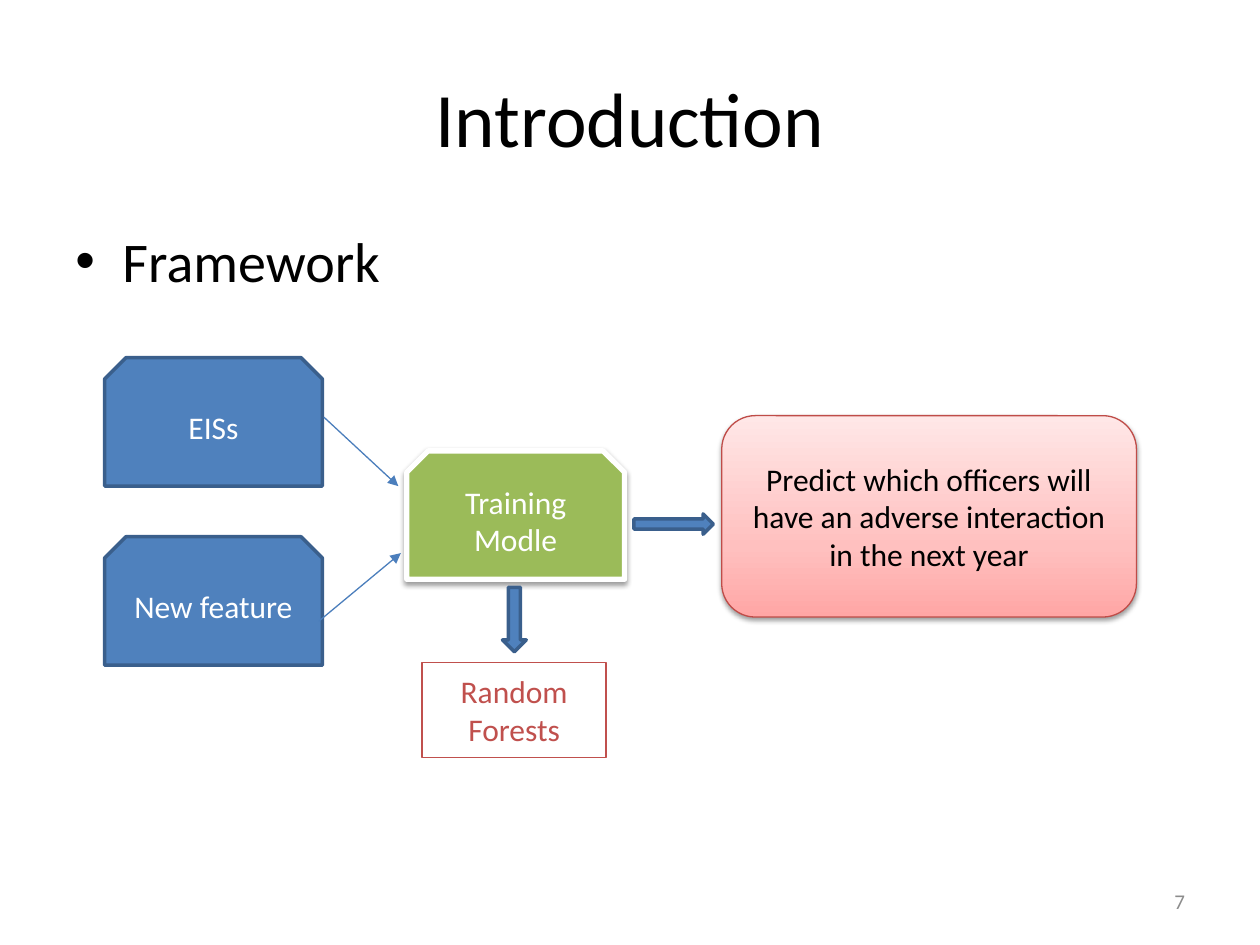
from lxml.etree import SubElement
from pptx import Presentation
from pptx.dml.color import RGBColor
from pptx.enum.shapes import MSO_CONNECTOR, MSO_SHAPE as SHAPE
from pptx.enum.text import MSO_ANCHOR as ANCHOR, PP_ALIGN as ALIGN
from pptx.oxml import parse_xml
from pptx.oxml.ns import nsdecls, qn
from pptx.util import Cm, Pt

FONT = "Calibri"
BLACK = RGBColor(0x00, 0x00, 0x00)
WHITE = RGBColor(0xFF, 0xFF, 0xFF)
GRAY = RGBColor(0x8C, 0x8C, 0x8C)
BLUE = RGBColor(0x4F, 0x81, 0xBD)
NAVY = RGBColor(0x3A, 0x5F, 0x8C)
LINK = RGBColor(0x4B, 0x7E, 0xBC)
GREEN = RGBColor(0x9B, 0xBB, 0x59)
RED = RGBColor(0xC0, 0x50, 0x4D)
DARK_RED = RGBColor(0xBF, 0x4C, 0x48)
PINKS = [(0, RGBColor(0xFF, 0xA6, 0xA5)), (35, RGBColor(0xFF, 0xC0, 0xBF)),
         (100, RGBColor(0xFF, 0xE7, 0xE7))]

TITLE = ("Introduction", (1.27, 0.76, 22.86, 3.18))
BULLET = ("Framework", (1.27, 4.45, 22.86, 12.57))
NUMBER = ("7", (18.21, 17.65, 5.93, 1.02))
CARD = (4.39, 2.59)
INPUTS = dict(kind=SHAPE.SNIP_2_SAME_RECTANGLE, fill=BLUE, line=NAVY, width=2)
ARROW = dict(fill=BLUE, line=NAVY, width=2)
NODES = [
    ("EISs", (2.11, 7.21, *CARD), INPUTS),
    ("New feature", (2.11, 10.82, *CARD), INPUTS),
    ("Training Modle", (8.2, 9.09, *CARD),
     dict(kind=SHAPE.SNIP_2_SAME_RECTANGLE, fill=GREEN, line=WHITE, width=3, shadow=True)),
    ("", (12.78, 10.36, 1.6, 0.41), dict(ARROW, kind=SHAPE.RIGHT_ARROW)),
    ("Predict which officers will have an adverse interaction in the next year",
     (14.55, 8.38, 8.36, 4.06),
     dict(kind=SHAPE.ROUNDED_RECTANGLE, fill=PINKS, line=DARK_RED, color=BLACK, shadow=True)),
    ("", (10.13, 11.84, 0.48, 1.3), dict(ARROW, kind=SHAPE.DOWN_ARROW)),
    ("Random Forests", (8.51, 13.36, 3.71, 1.91),
     dict(kind=SHAPE.RECTANGLE, line=RED, color=RED)),
]
LINKS = [(6.43, 12.52, 8.08, 11.15), (6.53, 8.41, 8.03, 9.8)]


def write(sp, text, size=18, color=WHITE, align=ALIGN.CENTER, anchor=ANCHOR.MIDDLE, bullet=False):
    tf = sp.text_frame
    tf.word_wrap = True
    tf.vertical_anchor = anchor
    p = tf.paragraphs[0]
    p.alignment = align
    if bullet:
        pPr = p._p.get_or_add_pPr()
        pPr.set("marL", str(Cm(0.95)))
        pPr.set("indent", str(-Cm(0.95)))
        SubElement(pPr, qn("a:buFont")).set("typeface", "Arial")
        SubElement(pPr, qn("a:buChar")).set("char", "•")
    r = p.add_run()
    r.text = text
    r.font.name, r.font.size, r.font.color.rgb = FONT, Pt(size), color


def gradient(sp, stops):
    gs = "".join(f'<a:gs pos="{pos * 1000}"><a:srgbClr val="{color}"/></a:gs>'
                 for pos, color in stops)
    geom = sp._element.spPr.find(qn("a:prstGeom"))
    geom.addnext(parse_xml(f'<a:gradFill {nsdecls("a")} rotWithShape="1"><a:gsLst>{gs}</a:gsLst>'
                           '<a:lin ang="16200000" scaled="0"/></a:gradFill>'))


def add_shadow(sp):
    effects = sp._element.spPr.find(qn("a:effectLst"))
    effects.append(parse_xml(
        f'<a:outerShdw {nsdecls("a")} blurRad="{Pt(3.1)}" dist="{Pt(1.6)}" dir="5400000" '
        'rotWithShape="0"><a:srgbClr val="000000"><a:alpha val="38000"/></a:srgbClr>'
        '</a:outerShdw>'))


def add_node(slide, text, box, kind, line, fill=None, width=0.75, color=WHITE, shadow=False):
    sp = slide.shapes.add_shape(kind, *map(Cm, box))
    sp.shadow.inherit = False
    if fill is None:
        sp.fill.background()
    elif isinstance(fill, list):
        gradient(sp, fill)
    else:
        sp.fill.solid()
        sp.fill.fore_color.rgb = fill
    sp.line.color.rgb = line
    sp.line.width = Pt(width)
    if shadow:
        add_shadow(sp)
    if text:
        write(sp, text, color=color)


def add_link(slide, ends):
    cx = slide.shapes.add_connector(MSO_CONNECTOR.STRAIGHT, *map(Cm, ends))
    cx.line.color.rgb = LINK
    cx.line.width = Pt(0.75)
    SubElement(cx.line._get_or_add_ln(), qn("a:tailEnd")).set("type", "triangle")
    SubElement(cx._element.spPr, qn("a:effectLst"))


def add_text(slide, text, box, **style):
    write(slide.shapes.add_textbox(*map(Cm, box)), text, **style)


def main():
    prs = Presentation()
    prs.slide_width, prs.slide_height = Cm(25.4), Cm(19.05)
    slide = prs.slides.add_slide(prs.slide_layouts[5])
    title = slide.shapes.title
    text, box = TITLE
    title.left, title.top, title.width, title.height = map(Cm, box)
    write(title, text, size=44, color=BLACK)
    add_text(slide, *BULLET, size=32, color=BLACK, align=ALIGN.LEFT, anchor=ANCHOR.TOP, bullet=True)
    add_text(slide, *NUMBER, size=12, color=GRAY, align=ALIGN.RIGHT)
    for text, box, style in NODES:
        add_node(slide, text, box, **style)
    for ends in LINKS:
        add_link(slide, ends)
    prs.save("out.pptx")


if __name__ == "__main__":
    main()
